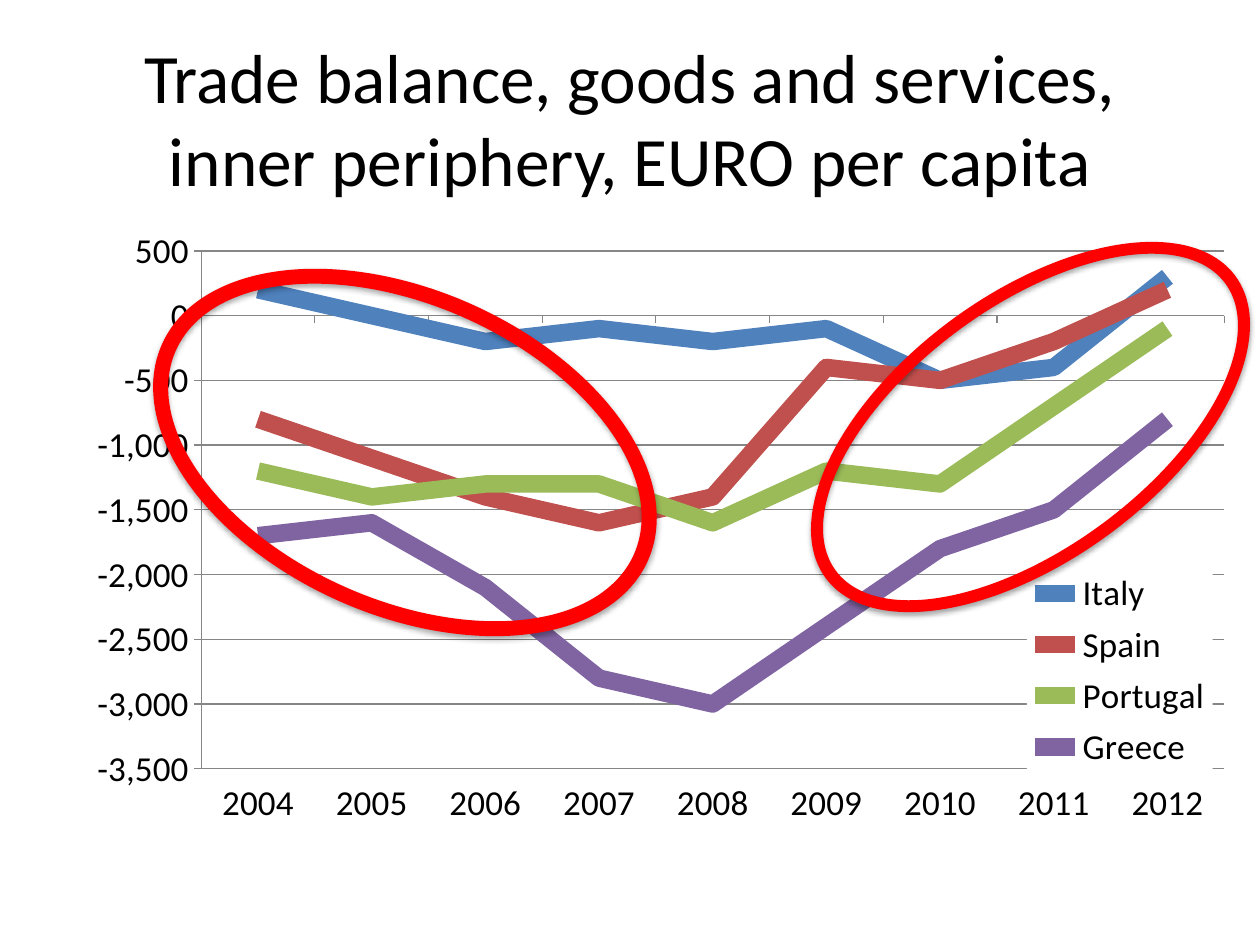
from lxml import etree
from pptx import Presentation
from pptx.chart.data import CategoryChartData
from pptx.dml.color import RGBColor
from pptx.enum.chart import XL_CHART_TYPE, XL_LEGEND_POSITION, XL_TICK_LABEL_POSITION, XL_TICK_MARK
from pptx.enum.shapes import MSO_SHAPE
from pptx.enum.text import MSO_ANCHOR, PP_ALIGN
from pptx.oxml import parse_xml
from pptx.oxml.ns import nsdecls, qn
from pptx.util import Pt

PX = 914400 / 126


def box(*lengths):
    """Turn px lengths into EMU."""
    return [round(n * PX) for n in lengths]


def manual_layout(x, y, w, h, inner=False):
    """Chart layout element, in fractions of the chart's size."""
    layout = parse_xml(f'<c:layout {nsdecls("c")}><c:manualLayout/></c:layout>')
    values = [("xMode", "edge"), ("yMode", "edge"), ("x", x), ("y", y), ("w", w), ("h", h)]
    if inner:
        values.insert(0, ("layoutTarget", "inner"))
    for tag, value in values:
        etree.SubElement(layout[0], qn(f"c:{tag}")).set("val", str(value))
    return layout


color = RGBColor.from_string
prs = Presentation()
prs.slide_width, prs.slide_height = box(1260, 945)
s = prs.slides.add_slide(prs.slide_layouts[5])

# Title
title = s.shapes.title
title.left, title.top, title.width, title.height = box(63, 38, 1134, 158)
tf = title.text_frame
tf.word_wrap = True
tf.vertical_anchor = MSO_ANCHOR.MIDDLE
p = tf.paragraphs[0]
p.text = "Trade balance, goods and services, inner periphery, EURO per capita"
p.alignment = PP_ALIGN.CENTER
p.font.name, p.font.size = "Calibri", Pt(39.6)
p.font.color.rgb = color("000000")

# Line chart
countries = [
    ("Italy", "4F81BD", [200, 0, -200, -100, -200, -100, -500, -400, 300]),
    ("Spain", "C0504D", [-800, -1100, -1400, -1600, -1400, -400, -500, -200, 200]),
    ("Portugal", "9BBB59", [-1200, -1400, -1300, -1300, -1600, -1200, -1300, -700, -100]),
    ("Greece", "8064A2", [-1700, -1600, -2100, -2800, -3000, -2400, -1800, -1500, -800]),
]
data = CategoryChartData(number_format="#,##0")
data.categories = [str(year) for year in range(2004, 2013)]
for name, _, values in countries:
    data.add_series(name, values)
chart = s.shapes.add_chart(XL_CHART_TYPE.LINE, *box(63, 221, 1162, 624), data).chart
chart.has_title = False
chart.font.name, chart.font.size = "Calibri", Pt(20)
chart.font.color.rgb = color("000000")
plot = chart.plots[0]
plot.vary_by_categories = False
for series, (_, line_color, _) in zip(plot.series, countries):
    series.smooth = False
    series.format.line.width = Pt(10)
    series.format.line.color.rgb = color(line_color)

years, balance = chart.category_axis, chart.value_axis
years.tick_label_position = XL_TICK_LABEL_POSITION.LOW
balance.minimum_scale, balance.maximum_scale, balance.major_unit = -3500, 500, 500
balance.has_major_gridlines = True
balance.tick_labels.number_format = "#,##0"
balance.tick_labels.number_format_is_linked = False
for axis in (years, balance):
    axis.major_tick_mark = XL_TICK_MARK.OUTSIDE
    axis.minor_tick_mark = XL_TICK_MARK.NONE
for part in (years, balance, balance.major_gridlines):
    part.format.line.width = Pt(0.75)
    part.format.line.color.rgb = color("868686")

chart.has_legend = True
legend = chart.legend
legend.position = XL_LEGEND_POSITION.RIGHT
legend.include_in_layout = False
legend.font.name, legend.font.size = "Calibri", Pt(20)
legend.font.color.rgb = color("000000")

# Fixed plot area, with a white legend over its lower right corner
plot_area = chart._chartSpace.find(".//" + qn("c:plotArea"))
legend_xml = chart._chartSpace.find(".//" + qn("c:legend"))
for parent in (plot_area, legend_xml):
    for old in parent.findall(qn("c:layout")):
        parent.remove(old)
plot_area.insert(0, manual_layout(0.119, 0.048, 0.881, 0.83, inner=True))
legend_xml.find(qn("c:legendPos")).addnext(manual_layout(0.83, 0.55, 0.16, 0.34))
legend_xml.find(qn("c:overlay")).addnext(parse_xml(
    f'<c:spPr {nsdecls("c", "a")}><a:solidFill><a:srgbClr val="FFFFFF"/></a:solidFill></c:spPr>'))

# Red rings around the first and last years
for bounds, rotation in [((139, 290, 532, 325), 24), ((776, 294, 509, 266), 143.6)]:
    sp = s.shapes.add_shape(MSO_SHAPE.DONUT, *box(*bounds))
    sp.rotation = rotation
    sp.adjustments[0] = 0.047
    sp.fill.solid()
    sp.fill.fore_color.rgb = color("FF0000")
    sp.line.fill.background()
    sp.shadow.inherit = False
    sp._element.spPr.find(qn("a:effectLst")).append(parse_xml(
        f'<a:outerShdw {nsdecls("a")} blurRad="40000" dist="23000" dir="5400000" rotWithShape="0">'
        '<a:srgbClr val="000000"><a:alpha val="35000"/></a:srgbClr></a:outerShdw>'))

prs.save("out.pptx")
